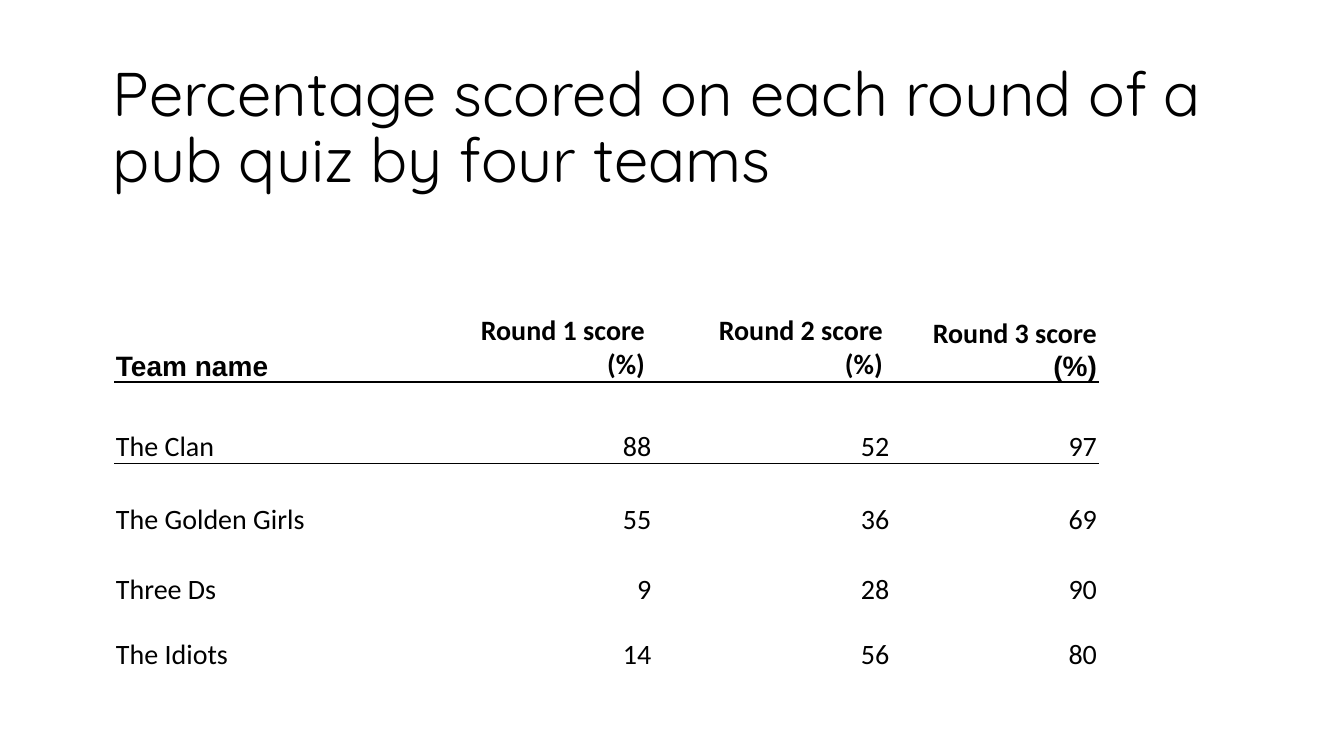
from lxml.etree import SubElement
from pptx import Presentation
from pptx.dml.color import RGBColor
from pptx.enum.text import MSO_ANCHOR, MSO_AUTO_SIZE, PP_ALIGN
from pptx.oxml.ns import qn
from pptx.util import Pt

PX = 9144  # 100 px to the inch
COLORS = {"text": "000000", "rule": "000000"}


def write_text(text_frame, lines, size=20, bold=False, align=PP_ALIGN.LEFT, spacing=1.0):
    """Write one paragraph for each (text, font name) pair."""
    for index, (text, font_name) in enumerate(lines):
        paragraph = text_frame.add_paragraph() if index else text_frame.paragraphs[0]
        paragraph.alignment = align
        paragraph.line_spacing = spacing
        run = paragraph.add_run()
        run.text = text
        run.font.name = font_name
        run.font.size = Pt(size)
        run.font.bold = bold
        run.font.color.rgb = RGBColor.from_string(COLORS["text"])


def add_rule(cell, side):
    line = SubElement(cell._tc.get_or_add_tcPr(), qn(f"a:{side}"), w=str(Pt(1)))
    fill = SubElement(line, qn("a:solidFill"))
    SubElement(fill, qn("a:srgbClr"), val=COLORS["rule"])


presentation = Presentation()
presentation.slide_width = 1333 * PX
presentation.slide_height = 750 * PX
slide = presentation.slides.add_slide(presentation.slide_layouts[5])

title = slide.shapes.title
title.left, title.top, title.width, title.height = (n * PX for n in (102, 56, 1150, 145))
title.text_frame.word_wrap = True
title.text_frame.auto_size = MSO_AUTO_SIZE.NONE
title.text_frame.vertical_anchor = MSO_ANCHOR.MIDDLE
write_text(
    title.text_frame,
    [("Percentage scored on each round of a pub quiz by four teams", "Quicksand")],
    size=44,
    spacing=0.9,
)

headings = [
    [("Team name", "Arial")],
    [("Round 1 score ", "Calibri"), ("(%) ", "Calibri")],
    [("Round 2 score ", "Calibri"), ("(%) ", "Calibri")],
    [("Round 3 score", "Calibri"), ("(%)", "Arial")],
]
scores = [
    ("The Clan", 88, 52, 97),
    ("The Golden Girls", 55, 36, 69),
    ("Three Ds", 9, 28, 90),
    ("The Idiots", 14, 56, 80),
]
rows = [headings] + [[[(str(value), "Calibri")] for value in team] for team in scores]
column_widths = [322, 211, 236, 206]
row_heights = [107, 81, 73, 69, 65]

table = slide.shapes.add_table(
    len(rows), len(headings), 114 * PX, 272 * PX, sum(column_widths) * PX, sum(row_heights) * PX
).table
table.first_row = False
table.horz_banding = False
for column, width in zip(table.columns, column_widths):
    column.width = width * PX
for row, height in zip(table.rows, row_heights):
    row.height = height * PX

for row_index, row in enumerate(rows):
    for column_index, lines in enumerate(row):
        cell = table.cell(row_index, column_index)
        cell.margin_left = cell.margin_right = cell.margin_top = PX
        cell.margin_bottom = 0
        cell.vertical_anchor = MSO_ANCHOR.BOTTOM
        if row_index in (1, 2):
            add_rule(cell, "lnT")
        if row_index in (0, 1):
            add_rule(cell, "lnB")
        cell.fill.background()
        write_text(
            cell.text_frame,
            lines,
            bold=row_index == 0,
            align=PP_ALIGN.RIGHT if column_index else PP_ALIGN.LEFT,
        )

presentation.save("out.pptx")
